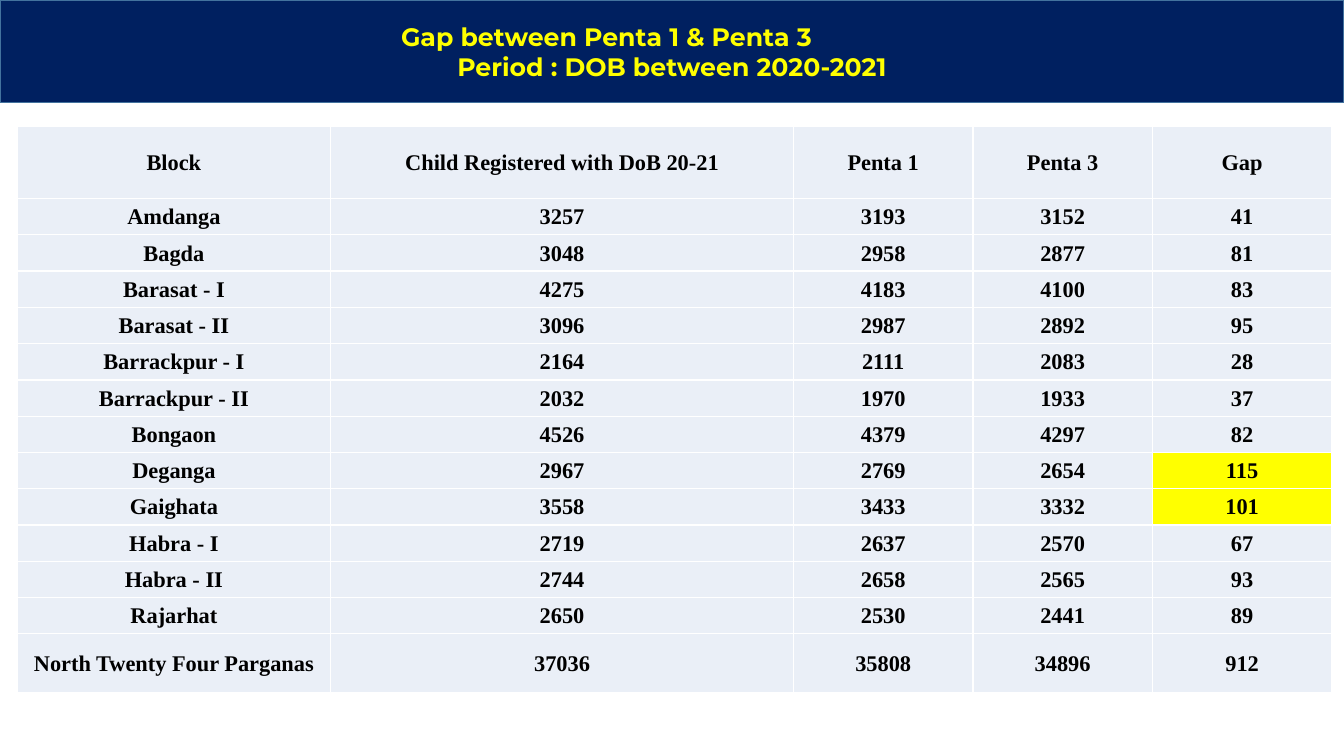
import pptx
import pptx.dml.color
import pptx.enum.shapes
import pptx.enum.text
import pptx.oxml.ns
import pptx.util
from lxml import etree

Inches = pptx.util.Inches
Pt = pptx.util.Pt
ALIGN = pptx.enum.text.PP_ALIGN
MIDDLE = pptx.enum.text.MSO_ANCHOR.MIDDLE

COLOURS = {
    "banner": "002060",
    "banner_line": "43739E",
    "title": "FFFF00",
    "cell": "EAEFF7",
    "highlight": "FFFF00",
    "border": "FFFFFF",
    "text": "000000",
}
TITLE_FONT = {"name": "Montserrat", "size": Pt(18), "bold": True}
TABLE_FONT = {"name": "Times New Roman", "size": Pt(16), "bold": True}
CELL_FORMAT = {
    "vertical_anchor": MIDDLE,
    "margin_left": Inches(0.01),
    "margin_top": Inches(0.01),
    "margin_right": Inches(0.01),
    "margin_bottom": 0,
}

HEADINGS = ("Block", "Child Registered with DoB 20-21", "Penta 1", "Penta 3", "Gap")
BLOCKS = [  # block, registered, Penta 1, Penta 3
    ("Amdanga", 3257, 3193, 3152),
    ("Bagda", 3048, 2958, 2877),
    ("Barasat - I", 4275, 4183, 4100),
    ("Barasat - II", 3096, 2987, 2892),
    ("Barrackpur - I", 2164, 2111, 2083),
    ("Barrackpur - II", 2032, 1970, 1933),
    ("Bongaon", 4526, 4379, 4297),
    ("Deganga", 2967, 2769, 2654),
    ("Gaighata", 3558, 3433, 3332),
    ("Habra - I", 2719, 2637, 2570),
    ("Habra - II", 2744, 2658, 2565),
    ("Rajarhat", 2650, 2530, 2441),
]
DISTRICT = "North Twenty Four Parganas"
HIGHLIGHT_ABOVE = 100
COLUMN_WIDTHS = (3.11, 4.59, 1.78, 1.78, 1.78)
ROW_HEIGHTS = [0.72] + [0.36] * len(BLOCKS) + [0.58]


def colour(name):
    return pptx.dml.color.RGBColor.from_string(COLOURS[name])


def apply_format(target, values):
    for name, value in values.items():
        setattr(target, name, value)


def write(para, text, font, colour_name, align):
    para.alignment = align
    span = para.add_run()
    span.text = text
    apply_format(span.font, font)
    span.font.color.rgb = colour(colour_name)


def add_banner(page, left, top, width, height):
    banner = page.shapes.add_shape(
        pptx.enum.shapes.MSO_SHAPE.RECTANGLE,
        Inches(left), Inches(top), Inches(width), Inches(height))
    banner.shadow.inherit = False
    banner.fill.solid()
    banner.fill.fore_color.rgb = colour("banner")
    banner.line.color.rgb = colour("banner_line")
    banner.line.width = Pt(1)
    frame = banner.text_frame
    apply_format(frame, {"word_wrap": True, "vertical_anchor": MIDDLE})
    heading = frame.paragraphs[0]
    write(heading, "Gap between Penta 1 & Penta 3", TITLE_FONT, "title", ALIGN.LEFT)
    heading._p.get_or_add_pPr().set("marL", str(Inches(3.88)))
    write(frame.add_paragraph(), "Period : DOB between 2020-2021",
          TITLE_FONT, "title", ALIGN.CENTER)


def add_borders(cell):
    properties = cell._tc.get_or_add_tcPr()
    qn = pptx.oxml.ns.qn
    for side in ("lnL", "lnR", "lnT", "lnB"):
        line = etree.SubElement(properties, qn("a:" + side), w=str(Pt(1)))
        fill = etree.SubElement(line, qn("a:solidFill"))
        etree.SubElement(fill, qn("a:srgbClr"), val=COLOURS["border"])


def fill_cell(cell, text, fill_name):
    apply_format(cell, CELL_FORMAT)
    write(cell.text_frame.paragraphs[0], text, TABLE_FONT, "text", ALIGN.CENTER)
    add_borders(cell)
    cell.fill.solid()
    cell.fill.fore_color.rgb = colour(fill_name)


def table_rows():
    """Return headings, blocks and district total, with the gap worked out."""
    totals = [sum(column) for column in list(zip(*BLOCKS))[1:]]
    counts = BLOCKS + [(DISTRICT, *totals)]
    return [HEADINGS] + [(*row, row[2] - row[3]) for row in counts]


def add_gap_table(page, left, top):
    rows = table_rows()
    table = page.shapes.add_table(
        len(rows), len(HEADINGS), Inches(left), Inches(top),
        Inches(sum(COLUMN_WIDTHS)), Inches(sum(ROW_HEIGHTS))).table
    for column, width in zip(table.columns, COLUMN_WIDTHS):
        column.width = Inches(width)
    for row, height in zip(table.rows, ROW_HEIGHTS):
        row.height = Inches(height)
    gap_column = len(HEADINGS) - 1
    for r, values in enumerate(rows):
        is_block = 0 < r <= len(BLOCKS)
        for c, value in enumerate(values):
            wide_gap = is_block and c == gap_column and value > HIGHLIGHT_ABOVE
            fill_cell(table.cell(r, c), str(value), "highlight" if wide_gap else "cell")


def main():
    deck = pptx.Presentation()
    deck.slide_width, deck.slide_height = Inches(13.33), Inches(7.5)
    page = deck.slides.add_slide(deck.slide_layouts[6])
    add_banner(page, 0, 0, 13.33, 1.02)
    add_gap_table(page, 0.17, 1.25)
    deck.save("out.pptx")


if __name__ == "__main__":
    main()
